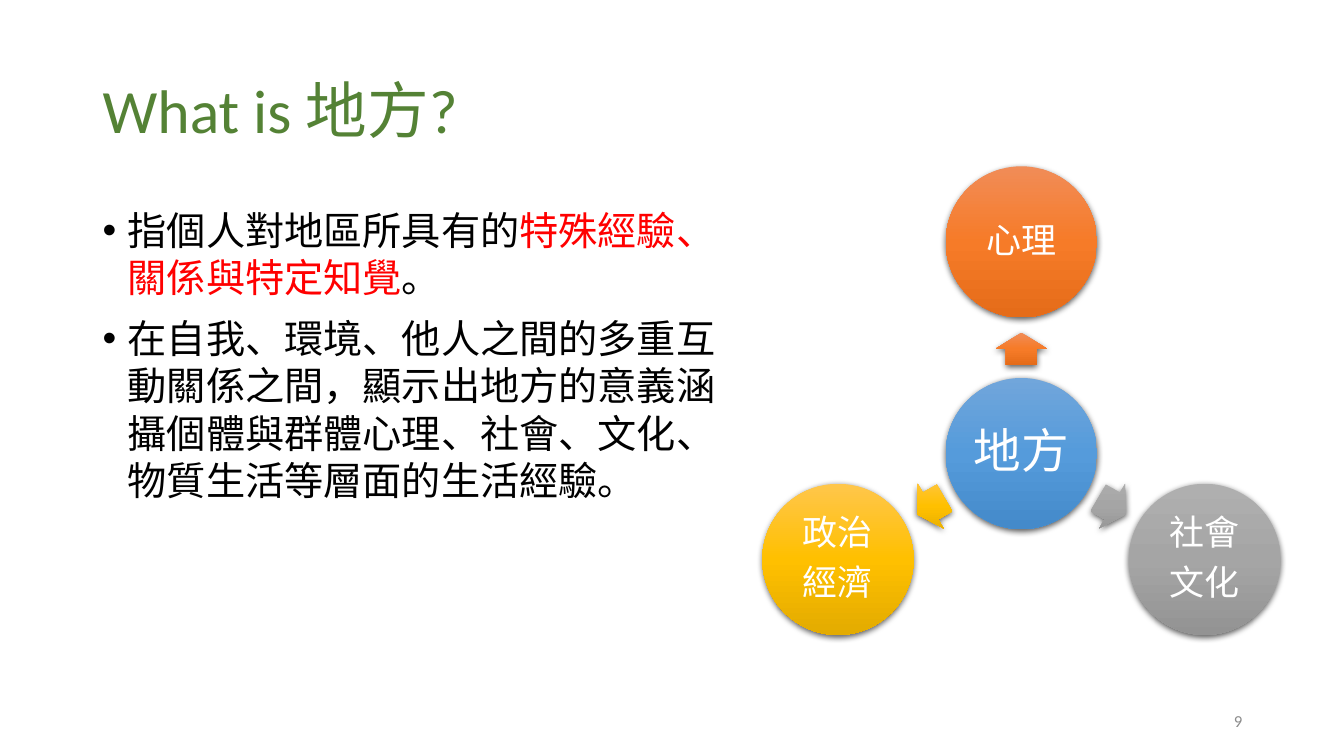
from copy import deepcopy
from math import cos, radians, sin

from lxml import etree
from pptx import Presentation
from pptx.dml.color import RGBColor
from pptx.enum.shapes import MSO_SHAPE
from pptx.enum.text import MSO_ANCHOR, PP_ALIGN
from pptx.oxml.ns import qn
from pptx.util import Inches, Pt

OVAL, ARROW = MSO_SHAPE.OVAL, MSO_SHAPE.RIGHT_ARROW
TOP, MIDDLE = MSO_ANCHOR.TOP, MSO_ANCHOR.MIDDLE
LEFT, CENTER, RIGHT = PP_ALIGN.LEFT, PP_ALIGN.CENTER, PP_ALIGN.RIGHT

COLORS = {
    "title": "548235", "body": "000000", "emphasis": "FF0000",
    "label": "FFFFFF", "number": "8C8C8C", "shadow": "000000",
}
GRADIENTS = {
    "blue": ("71A6DB", "559BDB", "448ACA"),
    "orange": ("F18C57", "F67B28", "E56C19"),
    "gray": ("AFAFAF", "A5A5A5", "939393"),
    "gold": ("FFC64B", "FFC000", "E3AB00"),
}


def write_text(frame, paragraphs, size, color, align=LEFT, anchor=MIDDLE,
               line_spacing=None, gap=0, bullet=False, margin=None):
    frame.word_wrap = True
    frame.vertical_anchor = anchor
    if margin is not None:
        frame.margin_left = frame.margin_right = Inches(margin)
        frame.margin_top = frame.margin_bottom = Inches(margin)
    for index, runs in enumerate(paragraphs):
        paragraph = frame.add_paragraph() if index else frame.paragraphs[0]
        paragraph.alignment = align
        if line_spacing:
            paragraph.line_spacing = line_spacing
        if index:
            paragraph.space_before = Pt(gap)
        if bullet:
            properties = paragraph._p.get_or_add_pPr()
            properties.set("marL", str(Inches(0.25)))
            properties.set("indent", str(-Inches(0.25)))
            etree.SubElement(properties, qn("a:buFont")).set("typeface", "Arial")
            etree.SubElement(properties, qn("a:buChar")).set("char", "•")
        for words, run_color in runs:
            run = paragraph.add_run()
            run.text = words
            run.font.name = "Calibri"
            run.font.size = Pt(size)
            run.font.color.rgb = RGBColor.from_string(COLORS[run_color or color])


def add_glossy(kind, center_x, center_y, width, height, gradient):
    shape = slide.shapes.add_shape(
        kind, Inches(center_x - width / 2), Inches(center_y - height / 2),
        Inches(width), Inches(height))
    shape.line.fill.background()
    shape.fill.gradient()
    shape.fill.gradient_angle = 270
    gradient_fill = shape._element.spPr.find(qn("a:gradFill"))
    gradient_fill.set("rotWithShape", "0")
    stop_list = gradient_fill.find(qn("a:gsLst"))
    stop_list.append(deepcopy(stop_list[0]))
    for index, stop in enumerate(shape.fill.gradient_stops):
        stop.position = index / 2
        stop.color.rgb = RGBColor.from_string(GRADIENTS[gradient][index])
    shape.shadow.inherit = False
    effects = shape._element.spPr.find(qn("a:effectLst"))
    shadow = etree.SubElement(
        effects, qn("a:outerShdw"), blurRad=str(Pt(4.5)), dist=str(Pt(1.5)),
        dir="5400000", algn="ctr", rotWithShape="0")
    shade = etree.SubElement(shadow, qn("a:srgbClr"), val=COLORS["shadow"])
    etree.SubElement(shade, qn("a:alpha"), val="63000")
    return shape


presentation = Presentation()
presentation.slide_width = Inches(13.33)
presentation.slide_height = Inches(7.5)
slide = presentation.slides.add_slide(presentation.slide_layouts[6])

title = slide.shapes.add_textbox(Inches(0.92), Inches(0.4), Inches(11.5), Inches(1.45))
write_text(title.text_frame, [[("What is 地方?", None)]],
           size=44, color="title", line_spacing=0.9)

definition = slide.shapes.add_textbox(Inches(0.92), Inches(2), Inches(6.34), Inches(4.76))
write_text(definition.text_frame, [
    [("指個人對地區所具有的", None), ("特殊經驗、關係與特定知覺", "emphasis"), ("。", None)],
    [("在自我、環境、他人之間的多重互動關係之間，顯示出地方的意義涵攝個體與群體心理、"
      "社會、文化、物質生活等層面的生活經驗。", None)],
], size=28, color="body", anchor=TOP, gap=10, bullet=True)

HUB_X, HUB_Y, DIAMETER = 10.13, 4.5, 1.5
ORBIT, ARROW_ORBIT = 2.1, 1.04

place = add_glossy(OVAL, HUB_X, HUB_Y, DIAMETER, DIAMETER, "blue")
write_text(place.text_frame, [[("地方", None)]], size=34, color="label",
           align=CENTER, line_spacing=0.9, margin=0)

ASPECTS = [
    (270, "orange", ["心理"]),
    (30, "gray", ["社會", "文化"]),
    (150, "gold", ["政治", "經濟"]),
]
for angle, gradient, lines in ASPECTS:
    across, down = cos(radians(angle)), sin(radians(angle))
    pointer = add_glossy(ARROW, HUB_X + ARROW_ORBIT * across,
                         HUB_Y + ARROW_ORBIT * down, 0.32, 0.51, gradient)
    pointer.rotation = angle
    pointer.adjustments[0] = 0.6
    pointer.adjustments[1] = 0.5
    aspect = add_glossy(OVAL, HUB_X + ORBIT * across, HUB_Y + ORBIT * down,
                        DIAMETER, DIAMETER, gradient)
    write_text(aspect.text_frame, [[(line, None)] for line in lines], size=25,
               color="label", align=CENTER, line_spacing=0.9, gap=8.75, margin=0)

page_number = slide.shapes.add_textbox(Inches(9.42), Inches(6.95), Inches(3), Inches(0.4))
write_text(page_number.text_frame, [[("9", None)]], size=12, color="number", align=RIGHT)

presentation.save("out.pptx")
